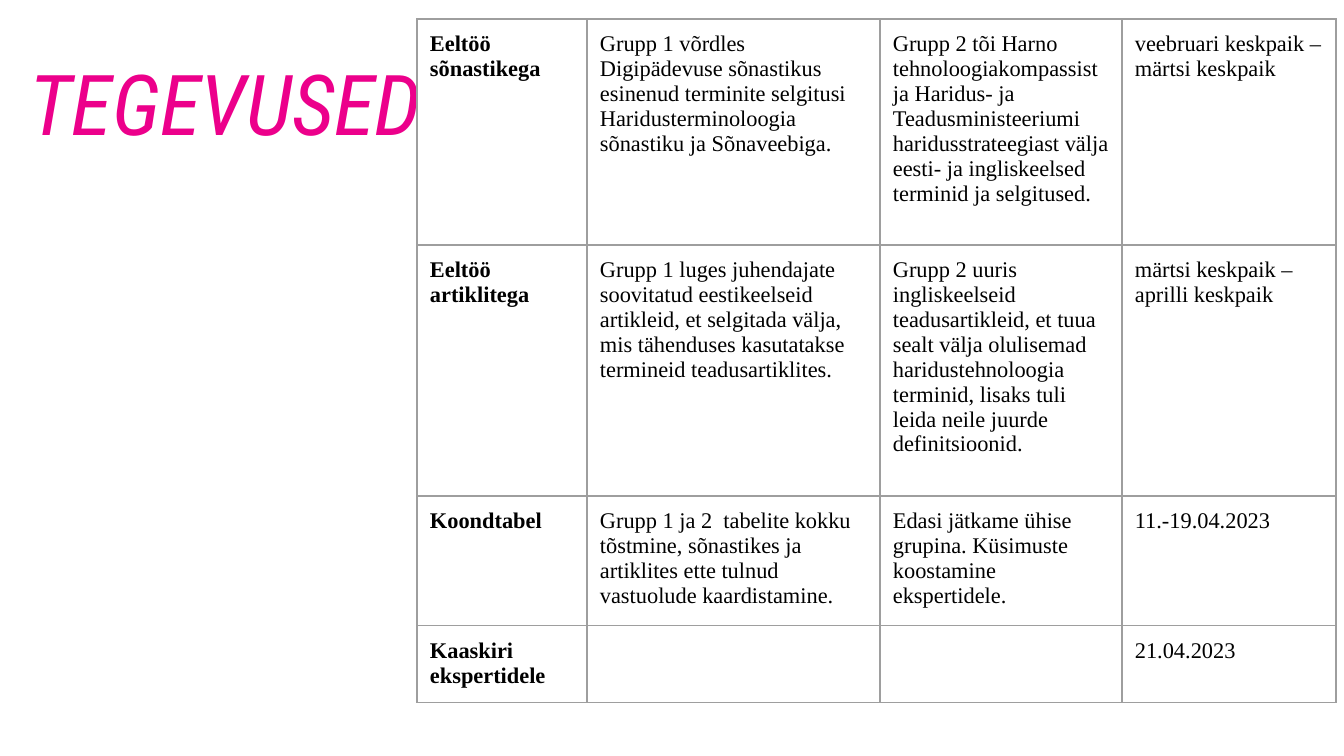
from lxml.etree import SubElement
from pptx import Presentation
from pptx.dml.color import RGBColor
from pptx.enum.text import MSO_ANCHOR, MSO_AUTO_SIZE, PP_ALIGN
from pptx.oxml.ns import qn
from pptx.util import Emu, Pt

EMU_PER_PX = 914400 / 134.4

ROWS = [
    ["Eeltöö sõnastikega",
     "Grupp 1 võrdles Digipädevuse sõnastikus esinenud terminite selgitusi "
     "Haridusterminoloogia sõnastiku ja Sõnaveebiga.",
     "Grupp 2 tõi Harno tehnoloogiakompassist ja Haridus- ja Teadusministeeriumi "
     "haridusstrateegiast välja eesti- ja ingliskeelsed terminid ja selgitused.",
     "veebruari keskpaik – märtsi keskpaik"],
    ["Eeltöö artiklitega",
     "Grupp 1 luges juhendajate soovitatud eestikeelseid artikleid, et selgitada "
     "välja, mis tähenduses kasutatakse termineid teadusartiklites.",
     "Grupp 2 uuris ingliskeelseid teadusartikleid, et tuua sealt välja olulisemad "
     "haridustehnoloogia terminid, lisaks tuli leida neile juurde definitsioonid.",
     "märtsi keskpaik – aprilli keskpaik"],
    ["Koondtabel",
     "Grupp 1 ja 2  tabelite kokku tõstmine, sõnastikes ja artiklites ette tulnud "
     "vastuolude kaardistamine.",
     "Edasi jätkame ühise grupina. Küsimuste koostamine ekspertidele.",
     "11.-19.04.2023"],
    ["Kaaskiri ekspertidele", "", "", "21.04.2023"],
]


def px(length):
    return Emu(round(length * EMU_PER_PX))


def color(value):
    return RGBColor.from_string(value)


class SlideBuilder:
    title_font = "Roboto Condensed"
    body_font = "Times New Roman"
    accent = "EC008B"
    ink = "000000"
    border = "9E9E9E"

    def __init__(self, presentation):
        self.slide = presentation.slides.add_slide(presentation.slide_layouts[5])

    def add_run(self, paragraph, text, font, size, fill, bold=False, italic=False):
        run = paragraph.add_run()
        run.text = text
        run.font.name = font
        run.font.size = Pt(size)
        run.font.bold = bold
        run.font.italic = italic
        run.font.color.rgb = color(fill)

    def title(self, text, left, top, width, height):
        shape = self.slide.shapes.title
        shape.left, shape.top = px(left), px(top)
        shape.width, shape.height = px(width), px(height)
        frame = shape.text_frame
        frame.auto_size = MSO_AUTO_SIZE.NONE
        frame.word_wrap = True
        frame.vertical_anchor = MSO_ANCHOR.BOTTOM
        paragraph = frame.paragraphs[0]
        paragraph.alignment = PP_ALIGN.LEFT
        self.add_run(paragraph, text, self.title_font, 45, self.accent, italic=True)

    def outline(self, cell):
        properties = cell._tc.get_or_add_tcPr()
        for side in ("a:lnL", "a:lnR", "a:lnT", "a:lnB"):
            line = SubElement(properties, qn(side), w=str(Pt(0.75)))
            fill = SubElement(line, qn("a:solidFill"))
            SubElement(fill, qn("a:srgbClr"), val=self.border)

    def table(self, rows, left, top, widths, heights):
        table = self.slide.shapes.add_table(
            len(rows), len(widths), px(left), px(top),
            px(sum(widths)), px(sum(heights))).table
        table.first_row = False
        table.horz_banding = False
        for column, width in zip(table.columns, widths):
            column.width = px(width)
        for row, height, texts in zip(table.rows, heights, rows):
            row.height = px(height)
            for index, (cell, text) in enumerate(zip(row.cells, texts)):
                self.outline(cell)
                cell.fill.background()
                cell.margin_left = cell.margin_right = px(13)
                cell.margin_top = cell.margin_bottom = px(13)
                if text:
                    self.add_run(cell.text_frame.paragraphs[0], text,
                                 self.body_font, 12, self.ink, bold=index == 0)


def main():
    presentation = Presentation()
    presentation.slide_width = px(1344)
    presentation.slide_height = px(756)
    builder = SlideBuilder(presentation)
    builder.title("TEGEVUSED", 16, 19, 656, 140)
    builder.table(ROWS, 417, 19, [170, 293, 242, 214], [226, 251, 130, 77])
    presentation.save("out.pptx")


if __name__ == "__main__":
    main()
